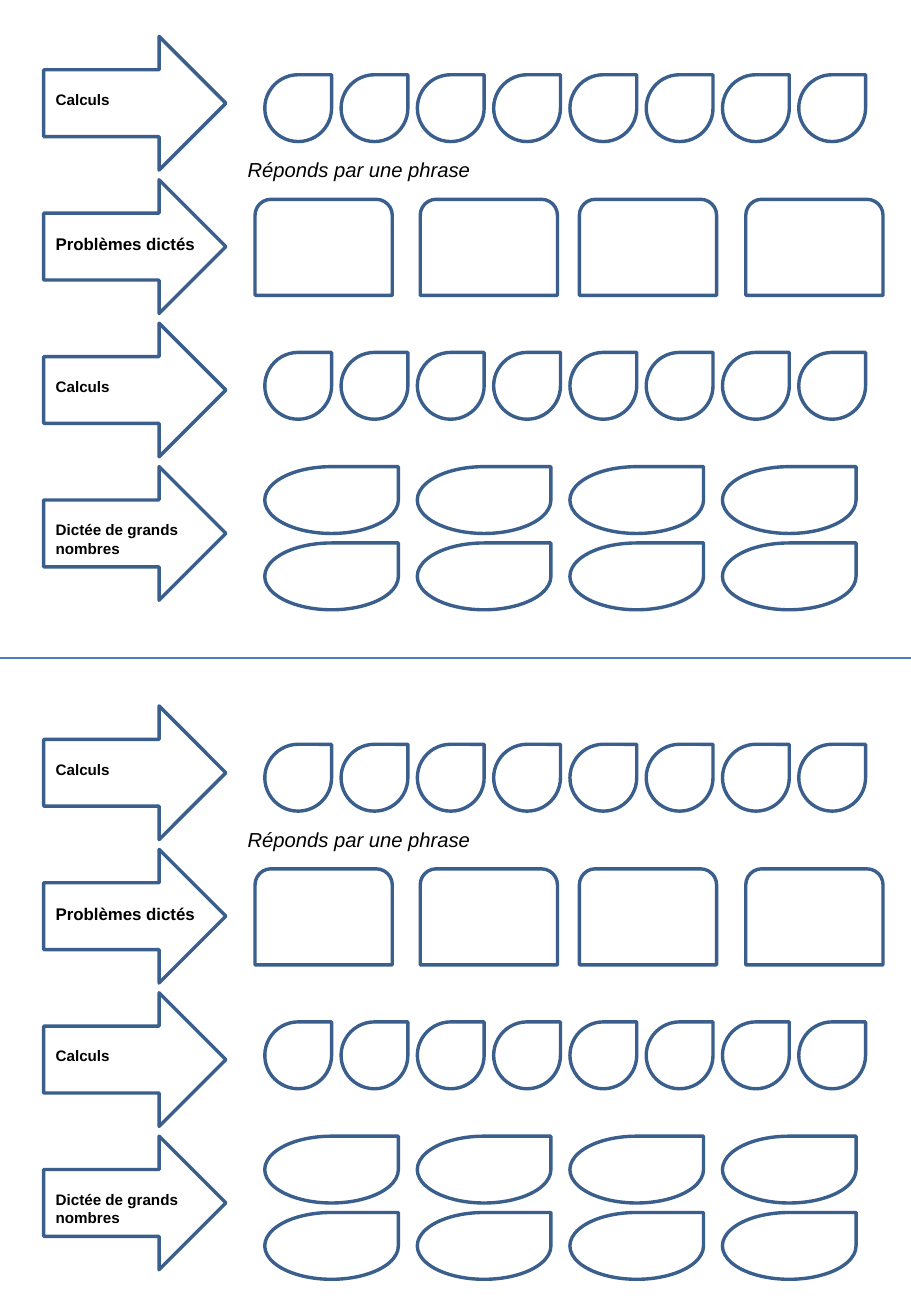
from lxml import etree
from pptx import Presentation
from pptx.dml.color import RGBColor
from pptx.enum.shapes import MSO_CONNECTOR, MSO_SHAPE
from pptx.enum.text import MSO_AUTO_SIZE
from pptx.oxml.ns import qn
from pptx.util import Inches, Pt

ARROW = MSO_SHAPE.RIGHT_ARROW
DROP = MSO_SHAPE.TEAR
CARD = MSO_SHAPE.ROUND_2_SAME_RECTANGLE
STRAIGHT = MSO_CONNECTOR.STRAIGHT
FIT_TEXT = MSO_AUTO_SIZE.SHAPE_TO_FIT_TEXT

COLORS = {"outline": "3A5F8C", "divider": "4B7EBC", "text": "000000"}
FONT = "Arial"
PAGE_W, PAGE_H = 7.5, 10.83

EXERCISES = [
    ("Calculs", 9, 1.42, 0.25),
    ("Problèmes dictés", 10, 1.5, 0.27),
    ("Calculs", 9, 1.42, 0.25),
    ("Dictée de grands nombres", 9, 1.42, 0.4),
]
INSTRUCTION = "Réponds par une phrase"

HALF_TOPS = [0.3, 5.81]
ARROW_LEFT, ARROW_STEP, LABEL_DROP = 0.36, 1.18, 0.395
ANSWER_LEFT, ANSWER_STEP, ANSWER_H = 2.18, 0.628, 0.55
CALC_DROPS = [0.315, 2.6]
NUMBER_TOP = 3.54
CARD_LEFTS = [2.1, 3.46, 4.77, 6.14]


def color(name):
    return RGBColor.from_string(COLORS[name])


def add_outline(s, kind, x, y, w, h):
    sp = s.shapes.add_shape(kind, Inches(x), Inches(y), Inches(w), Inches(h))
    sp.shadow.inherit = False
    sp.fill.background()
    sp.line.color.rgb = color("outline")
    sp.line.width = Pt(2)


def add_label(s, text, size, x, y, w, h, bold=False, italic=False):
    box = s.shapes.add_textbox(Inches(x), Inches(y), Inches(w), Inches(h))
    tf = box.text_frame
    tf.word_wrap = True
    tf.auto_size = FIT_TEXT
    tf.text = text
    font = tf.paragraphs[0].runs[0].font
    font.name = FONT
    font.size = Pt(size)
    font.bold = bold
    font.italic = italic
    font.color.rgb = color("text")


def add_divider(s):
    y = Inches(PAGE_H / 2)
    line = s.shapes.add_connector(STRAIGHT, 0, y, Inches(PAGE_W), y)
    line.line.color.rgb = color("divider")
    line.line.width = Pt(0.75)
    etree.SubElement(line._element.spPr, qn("a:effectLst"))


def add_answer_sheet(s, top):
    for i, (text, size, w, h) in enumerate(EXERCISES):
        y = top + i * ARROW_STEP
        add_outline(s, ARROW, ARROW_LEFT, y, 1.5, 1.1)
        add_label(s, text, size, ARROW_LEFT, y + LABEL_DROP, w, h, bold=True)

    for drop in CALC_DROPS:
        for col in range(8):
            x = ANSWER_LEFT + col * ANSWER_STEP
            add_outline(s, DROP, x, top + drop, ANSWER_H, ANSWER_H)

    add_label(s, INSTRUCTION, 12, 1.94, top + 0.945, 5.04, 0.3, italic=True)
    for x in CARD_LEFTS:
        add_outline(s, CARD, x, top + 1.34, 1.13, 0.79)

    for row in range(2):
        for col in range(4):
            x = ANSWER_LEFT + col * 2 * ANSWER_STEP
            y = top + NUMBER_TOP + row * ANSWER_STEP
            add_outline(s, DROP, x, y, 1.1, ANSWER_H)


def main():
    prs = Presentation()
    prs.slide_width, prs.slide_height = Inches(PAGE_W), Inches(PAGE_H)
    s = prs.slides.add_slide(prs.slide_layouts[6])
    add_divider(s)
    for top in HALF_TOPS:
        add_answer_sheet(s, top)
    prs.save("out.pptx")


if __name__ == "__main__":
    main()
